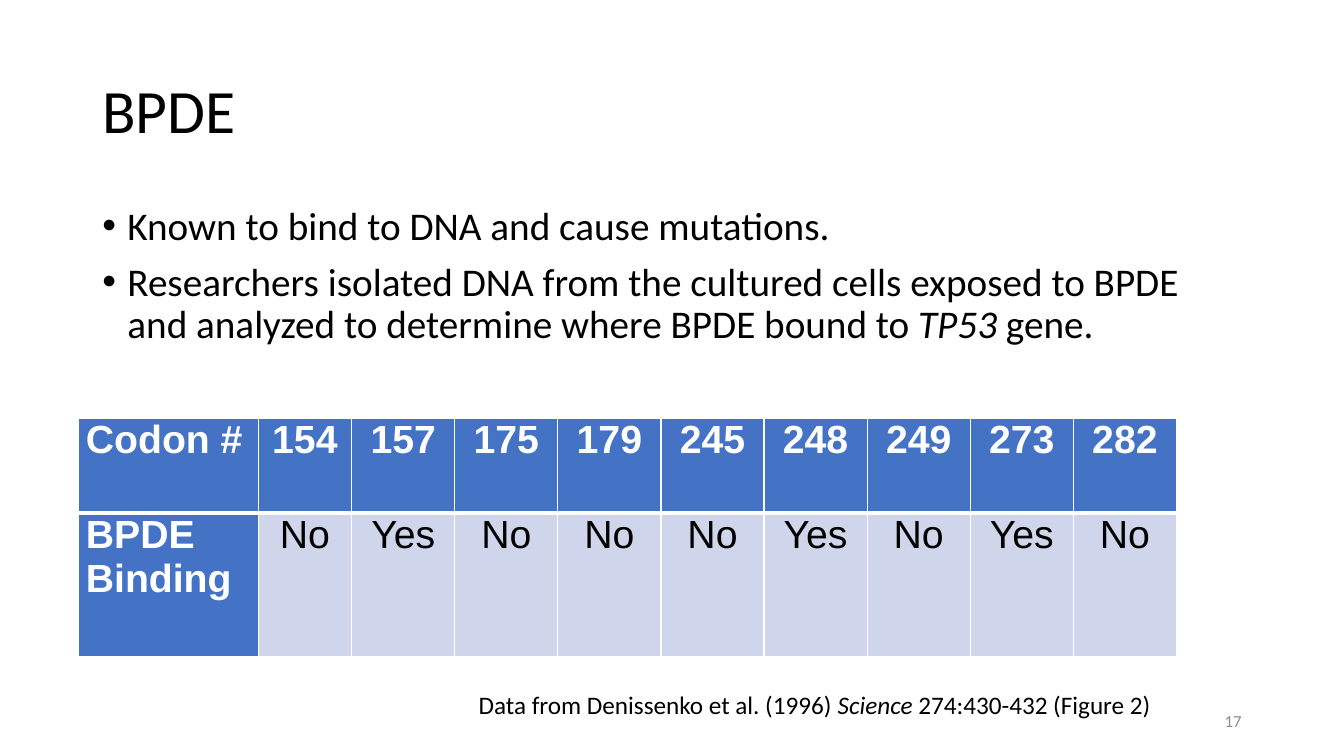
from pptx import Presentation
from pptx.dml.color import RGBColor
from pptx.enum.text import MSO_ANCHOR, PP_ALIGN
from pptx.oxml.ns import qn
from pptx.util import Pt
from lxml import etree

LEFT, CENTER, RIGHT = PP_ALIGN.LEFT, PP_ALIGN.CENTER, PP_ALIGN.RIGHT
TOP, MIDDLE = MSO_ANCHOR.TOP, MSO_ANCHOR.MIDDLE
TITLE_ONLY = 5

BLACK = RGBColor(0x00, 0x00, 0x00)
WHITE = RGBColor(0xFF, 0xFF, 0xFF)
GRAY = RGBColor(0x8C, 0x8C, 0x8C)
BLUE = RGBColor(0x44, 0x72, 0xC4)
PALE_BLUE = RGBColor(0xCF, 0xD5, 0xEA)

CODONS = ["154", "157", "175", "179", "245", "248", "249", "273", "282"]
BOUND_CODONS = {"157", "248", "273"}


def assign(target, values):
    for name, value in values.items():
        setattr(target, name, value)


class SlideBuilder:
    body_font = "Calibri"
    table_font = "Arial"

    def __init__(self, deck):
        self.slide = deck.slides.add_slide(deck.slide_layouts[TITLE_ONLY])

    def add_runs(self, paragraph, runs, size, color, font=body_font, bold=False):
        for text, italic in runs:
            run = paragraph.add_run()
            run.text = text
            assign(run.font, dict(name=font, size=Pt(size), bold=bold, italic=italic))
            run.font.color.rgb = color

    def title(self, box, text):
        heading = self.slide.shapes.title
        assign(heading, dict(zip(("left", "top", "width", "height"), map(Pt, box))))
        assign(heading.text_frame, dict(word_wrap=True, vertical_anchor=MIDDLE))
        line = heading.text_frame.paragraphs[0]
        assign(line, dict(alignment=LEFT, line_spacing=0.9))
        self.add_runs(line, [(text, False)], 44, BLACK)

    def text(self, box, paragraphs, size, color=BLACK, anchor=TOP, bullet=False, **layout):
        frame = self.slide.shapes.add_textbox(*map(Pt, box)).text_frame
        assign(frame, dict(word_wrap=True, vertical_anchor=anchor))
        for index, runs in enumerate(paragraphs):
            paragraph = frame.add_paragraph() if index else frame.paragraphs[0]
            assign(paragraph, layout)
            if bullet:
                self.bullet(paragraph)
            self.add_runs(paragraph, runs, size, color)

    def bullet(self, paragraph):
        properties = paragraph._p.get_or_add_pPr()
        properties.set("marL", str(Pt(18)))
        properties.set("indent", str(Pt(-18)))
        etree.SubElement(properties, qn("a:buFont"), typeface="Arial")
        etree.SubElement(properties, qn("a:buChar"), char="•")

    def borders(self, cell, weights):
        properties = cell._tc.get_or_add_tcPr()
        for side, weight in zip("LRTB", weights):
            line = etree.SubElement(properties, qn(f"a:ln{side}"), w=str(Pt(weight)))
            fill = etree.SubElement(line, qn("a:solidFill"))
            etree.SubElement(fill, qn("a:srgbClr"), val=str(WHITE))

    def table(self, left, top, widths, heights, rows):
        grid = self.slide.shapes.add_table(
            len(rows), len(widths), Pt(left), Pt(top), Pt(sum(widths)), Pt(sum(heights))
        ).table
        assign(grid, dict(first_row=False, horz_banding=False))
        for column, width in zip(grid.columns, widths):
            column.width = Pt(width)
        for row, height in zip(grid.rows, heights):
            row.height = Pt(height)
        for r, values in enumerate(rows):
            for c, value in enumerate(values):
                cell = grid.cell(r, c)
                header = r == 0 or c == 0
                assign(cell, dict(margin_left=Pt(5.2), margin_right=Pt(5.2),
                                  margin_top=0, margin_bottom=0))
                self.borders(cell, (1, 1, 3 if r else 1, 1 if r else 3))
                cell.fill.solid()
                cell.fill.fore_color.rgb = BLUE if header else PALE_BLUE
                paragraph = cell.text_frame.paragraphs[0]
                paragraph.alignment = CENTER if c else LEFT
                self.add_runs(paragraph, [(value, False)], 28, WHITE if header else BLACK,
                              self.table_font, header)


def main():
    deck = Presentation()
    assign(deck, dict(slide_width=Pt(960), slide_height=Pt(540)))
    page = SlideBuilder(deck)
    page.title((66, 28.75, 828, 104.4), "BPDE")
    findings = [
        [("Known to bind to DNA and cause mutations.", False)],
        [("Researchers isolated DNA from the cultured cells exposed to BPDE "
          "and analyzed to determine where BPDE bound to ", False),
         ("TP53", True), (" gene.", False)],
    ]
    page.text((66, 143.75, 828, 155), findings, 28, bullet=True,
              line_spacing=0.9, space_before=Pt(10))
    binding = ["Yes" if codon in BOUND_CODONS else "No" for codon in CODONS]
    page.table(56.2, 298.8, [128.2, 66.8] + [73.65] * 8, [67.7, 102.2],
               [["Codon #"] + CODONS, ["BPDE Binding"] + binding])
    citation = [("Data from Denissenko et al. (1996) ", False), ("Science", True),
                (" 274:430-432 (Figure 2)", False)]
    page.text((334.8, 488.9, 583.2, 29), [citation], 18)
    page.text((678, 500.5, 216, 28.75), [[("17", False)]], 12, GRAY, MIDDLE, alignment=RIGHT)
    deck.save("out.pptx")


if __name__ == "__main__":
    main()
